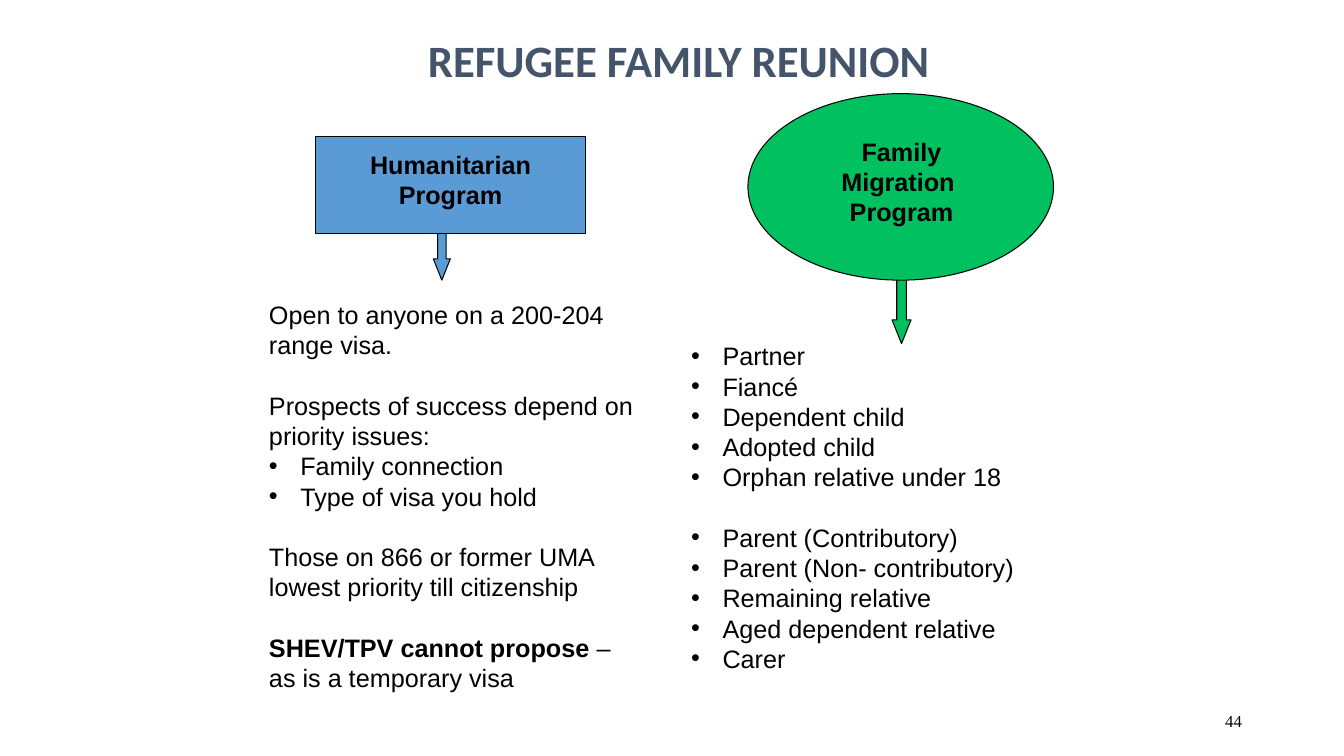
import pptx
import pptx.dml.color
import pptx.enum.shapes
import pptx.enum.text
import pptx.oxml
import pptx.oxml.ns
import pptx.util
from pptx.util import Cm

SHAPES = pptx.enum.shapes.MSO_SHAPE
ALIGN = pptx.enum.text.PP_ALIGN
BLACK = "000000"
BLUE = "5B9BD5"
GREEN = "00C060"
LINE_PITCH = pptx.util.Pt(21.6)


def colour(value):
    return pptx.dml.color.RGBColor.from_string(value)


def add_filled_shape(slide, kind, left, top, width, height, fill):
    shape = slide.shapes.add_shape(kind, Cm(left), Cm(top), Cm(width), Cm(height))
    shape.shadow.inherit = False
    shape.fill.solid()
    shape.fill.fore_color.rgb = colour(fill)
    shape.line.color.rgb = colour(BLACK)
    shape.line.width = pptx.util.Pt(0.75)
    return shape


def add_down_arrow(slide, left, top, width, height, fill):
    arrow = add_filled_shape(slide, SHAPES.DOWN_ARROW, left, top, width, height, fill)
    arrow.adjustments[0] = 0.5
    arrow.adjustments[1] = 1.25


def add_text_box(slide, left, top, width, height):
    box = slide.shapes.add_textbox(Cm(left), Cm(top), Cm(width), Cm(height))
    box.text_frame.word_wrap = True
    return box.text_frame


def add_run(paragraph, text, size=18, font="Arial", fill=BLACK, bold=False):
    run = paragraph.add_run()
    run.text = text
    run.font.size = pptx.util.Pt(size)
    run.font.name = font
    run.font.bold = bold
    run.font.color.rgb = colour(fill)


def set_bullet(paragraph):
    properties = paragraph._p.get_or_add_pPr()
    properties.set("marL", str(Cm(0.79)))
    properties.set("indent", str(-Cm(0.79)))
    namespace = pptx.oxml.ns.nsdecls("a")
    for tag in ('buFont typeface="Arial"', 'buChar char="•"'):
        properties.append(pptx.oxml.parse_xml(f"<a:{tag} {namespace}/>"))


def add_paragraph(frame, text, bold=False, bullet=False, gap=False, align=ALIGN.LEFT):
    first = frame.paragraphs[0]
    paragraph = frame.add_paragraph() if first.runs else first
    paragraph.alignment = align
    paragraph.line_spacing = LINE_PITCH
    if gap:
        paragraph.space_before = LINE_PITCH
    if bullet:
        set_bullet(paragraph)
    add_run(paragraph, text, bold=bold)
    return paragraph


def add_single_line(frame, text, align, **style):
    paragraph = frame.paragraphs[0]
    paragraph.alignment = align
    add_run(paragraph, text, **style)


def add_program_label(slide, left, top, width, height, lines):
    frame = add_text_box(slide, left, top, width, height)
    for line in lines:
        add_paragraph(frame, line, bold=True, align=ALIGN.CENTER)


def add_humanitarian_details(slide):
    frame = add_text_box(slide, 6.53, 7.42, 9.88, 11.02)
    add_paragraph(frame, "Open to anyone on a 200-204 range visa.")
    add_paragraph(frame, "Prospects of success depend on priority issues:", gap=True)
    for issue in ("Family connection", "Type of visa you hold"):
        add_paragraph(frame, issue, bullet=True)
    add_paragraph(
        frame, "Those on 866 or former UMA lowest priority till citizenship", gap=True
    )
    restriction = add_paragraph(frame, "SHEV/TPV cannot propose", bold=True, gap=True)
    add_run(restriction, " – as is a temporary visa")


def add_family_visas(slide):
    frame = add_text_box(slide, 17.17, 8.46, 10.8, 8.71)
    visa_groups = (
        ("Partner", "Fiancé", "Dependent child", "Adopted child",
         "Orphan relative under 18"),
        ("Parent (Contributory)", "Parent (Non- contributory)", "Remaining relative",
         "Aged dependent relative", "Carer"),
    )
    for group_index, group in enumerate(visa_groups):
        for visa_index, visa in enumerate(group):
            starts_group = group_index > 0 and visa_index == 0
            add_paragraph(frame, visa, bullet=True, gap=starts_group)


def main():
    presentation = pptx.Presentation()
    presentation.slide_width = Cm(33.87)
    presentation.slide_height = Cm(19.05)
    slide = presentation.slides.add_slide(presentation.slide_layouts[6])

    add_down_arrow(slide, 22.48, 6.65, 0.48, 2.01, GREEN)
    add_down_arrow(slide, 10.92, 5.05, 0.43, 2.01, BLUE)

    number_frame = add_text_box(slide, 23.93, 17.65, 7.62, 1.02)
    number_frame.vertical_anchor = pptx.enum.text.MSO_ANCHOR.MIDDLE
    add_single_line(number_frame, "44", ALIGN.RIGHT, size=12, font="Times New Roman")

    add_filled_shape(slide, SHAPES.RECTANGLE, 7.95, 3.45, 6.81, 2.44, BLUE)
    add_program_label(slide, 7.95, 3.63, 6.81, 1.8, ("Humanitarian", "Program"))
    add_filled_shape(slide, SHAPES.OVAL, 18.85, 2.36, 7.7, 4.7, GREEN)
    add_program_label(slide, 20.04, 3.3, 5.36, 3.33, ("Family Migration ", "Program"))

    add_humanitarian_details(slide)
    add_family_visas(slide)

    title_frame = add_text_box(slide, 5.31, 0.71, 23.6, 1.63)
    add_single_line(title_frame, "REFUGEE FAMILY REUNION", ALIGN.CENTER,
                    size=32, font="Calibri", fill="44546A", bold=True)

    presentation.save("out.pptx")


if __name__ == "__main__":
    main()
